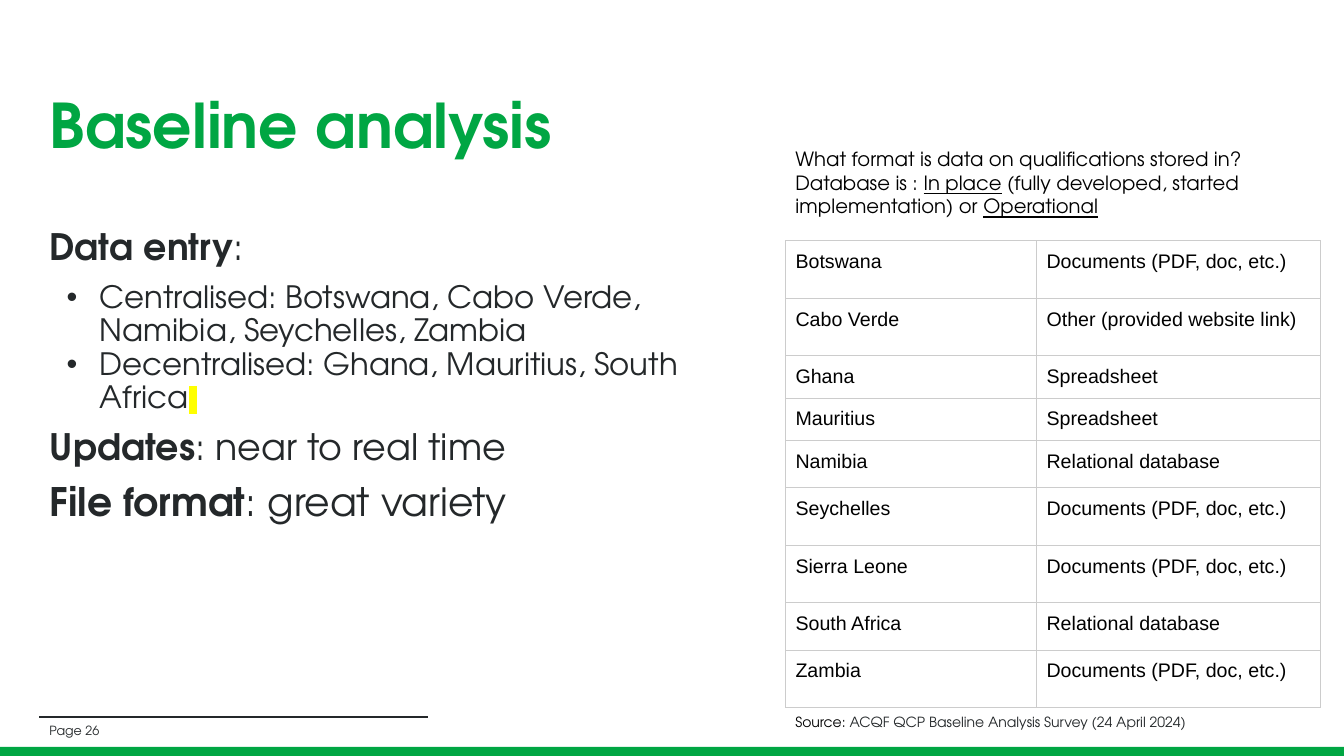
from dataclasses import dataclass
from typing import NamedTuple, Optional

from lxml import etree
from pptx import Presentation
from pptx.dml.color import RGBColor
from pptx.enum.shapes import MSO_CONNECTOR, MSO_SHAPE
from pptx.enum.text import MSO_ANCHOR, MSO_AUTO_SIZE, PP_ALIGN
from pptx.oxml.ns import qn
from pptx.util import Inches, Pt

GREEN = RGBColor(0x00, 0xA6, 0x43)
INK = RGBColor(0x24, 0x28, 0x2A)
BLACK = RGBColor(0x00, 0x00, 0x00)
YELLOW = RGBColor(0xFF, 0xFF, 0x00)
GREY = RGBColor(0xCC, 0xCC, 0xCC)

RECTANGLE = MSO_SHAPE.RECTANGLE
STRAIGHT = MSO_CONNECTOR.STRAIGHT
TOP, MIDDLE = MSO_ANCHOR.TOP, MSO_ANCHOR.MIDDLE
LEFT = PP_ALIGN.LEFT
NO_FIT = MSO_AUTO_SIZE.NONE

DISPLAY_FONT = "TeX Gyre Adventor"
TABLE_FONT = "Arial"

# The slide is a grid of 100 columns by 100 rows.
WIDTH, HEIGHT = Inches(13.33), Inches(7.5)
COLUMN, ROW = WIDTH / 100, HEIGHT / 100
MARGIN = 2.93
RIGHT_PART = 58.44


class Frame(NamedTuple):
    left: float
    top: float
    width: float
    height: float

    def lengths(self) -> tuple:
        return (round(self.left * COLUMN), round(self.top * ROW),
                round(self.width * COLUMN), round(self.height * ROW))


@dataclass(frozen=True)
class Span:
    text: str
    size: float
    color: RGBColor = INK
    bold: bool = False
    underline: bool = False
    highlight: Optional[RGBColor] = None
    font: str = DISPLAY_FONT


@dataclass(frozen=True)
class Para:
    spans: tuple
    before: float = 0
    spacing: float = 1.0
    bullet: bool = False


def add_color(parent, tag: str, color: RGBColor):
    element = etree.SubElement(parent, qn(tag))
    etree.SubElement(element, qn("a:srgbClr"), val=str(color))
    return element


def write_span(paragraph, span: Span) -> None:
    run = paragraph.add_run()
    run.text = span.text
    font = run.font
    font.name, font.size, font.bold = span.font, Pt(span.size), span.bold
    font.underline = span.underline
    font.color.rgb = span.color
    if span.highlight is not None:
        properties = run._r.get_or_add_rPr()
        mark = add_color(properties, "a:highlight", span.highlight)
        properties.find(qn("a:solidFill")).addnext(mark)


def set_bullet(paragraph, bullet: bool) -> None:
    properties = paragraph._p.get_or_add_pPr()
    properties.set("marL", str(Inches(0.5) if bullet else 0))
    properties.set("indent", str(Inches(-0.33) if bullet else 0))
    if bullet:
        add_color(properties, "a:buClr", INK)
        etree.SubElement(properties, qn("a:buFont"), typeface="Arial")
        etree.SubElement(properties, qn("a:buChar"), char="•")
    else:
        etree.SubElement(properties, qn("a:buNone"))


def write_paras(text_frame, paras: tuple) -> None:
    for index, para in enumerate(paras):
        paragraph = text_frame.add_paragraph() if index else text_frame.paragraphs[0]
        set_bullet(paragraph, para.bullet)
        paragraph.alignment = LEFT
        paragraph.line_spacing = para.spacing
        paragraph.space_before = Pt(para.before)
        for span in para.spans:
            write_span(paragraph, span)


def fill_box(box, frame: Frame, paras: tuple, anchor=TOP, inset: float = 0.05) -> None:
    """Place a placeholder or text box and write its paragraphs."""
    box.left, box.top, box.width, box.height = frame.lengths()
    text_frame = box.text_frame
    text_frame.word_wrap = True
    text_frame.auto_size = NO_FIT
    text_frame.vertical_anchor = anchor
    text_frame.margin_left = text_frame.margin_right = Inches(0.1)
    text_frame.margin_top = text_frame.margin_bottom = Inches(inset)
    write_paras(text_frame, paras)


def add_footer(page) -> None:
    bar = page.shapes.add_shape(RECTANGLE, *Frame(0, 98.8, 100, 1.2).lengths())
    bar.shadow.inherit = False
    bar.fill.solid()
    bar.fill.fore_color.rgb = GREEN
    bar.line.fill.background()
    left, top, width, _ = Frame(MARGIN, 94.8, 28.88, 0).lengths()
    rule = page.shapes.add_connector(STRAIGHT, left, top, left + width, top)
    rule.line.color.rgb = INK
    rule.line.width = Pt(1.5)
    etree.SubElement(rule._element.spPr, qn("a:effectLst"))


def format_cell(cell, text: str) -> None:
    cell.margin_left = cell.margin_right = Inches(0.1)
    cell.margin_top = cell.margin_bottom = Inches(0.1)
    cell.vertical_anchor = TOP
    write_span(cell.text_frame.paragraphs[0], Span(text, 14, BLACK, font=TABLE_FONT))
    properties = cell._tc.get_or_add_tcPr()
    for side in ("a:lnL", "a:lnR", "a:lnT", "a:lnB"):
        border = add_color(etree.SubElement(properties, qn(side), w=str(Pt(0.75))),
                           "a:solidFill", GREY)
        border.getparent().set("cap", "flat")
    cell.fill.background()


class Storage(NamedTuple):
    country: str
    data_format: str
    rows: float


TALL, MEDIUM, SHORT = 7.6, 6.27, 5.6
DOCUMENTS = "Documents (PDF, doc, etc.)"
STORAGES = (
    Storage("Botswana", DOCUMENTS, TALL),
    Storage("Cabo Verde", "Other (provided website link)", TALL),
    Storage("Ghana", "Spreadsheet", SHORT),
    Storage("Mauritius", "Spreadsheet", SHORT),
    Storage("Namibia", "Relational database", MEDIUM),
    Storage("Seychelles", DOCUMENTS, TALL),
    Storage("Sierra Leone", DOCUMENTS, TALL),
    Storage("South Africa", "Relational database", MEDIUM),
    Storage("Zambia", DOCUMENTS, TALL),
)
TABLE_COLUMNS = (18.68, 21.15)


def add_storage_table(page) -> None:
    frame = Frame(RIGHT_PART, 31.87, sum(TABLE_COLUMNS), sum(s.rows for s in STORAGES))
    table = page.shapes.add_table(len(STORAGES), 2, *frame.lengths()).table
    table.first_row = table.horz_banding = False
    for column, width in zip(table.columns, TABLE_COLUMNS):
        column.width = round(width * COLUMN)
    for index, storage in enumerate(STORAGES):
        table.rows[index].height = round(storage.rows * ROW)
        format_cell(table.cell(index, 0), storage.country)
        format_cell(table.cell(index, 1), storage.data_format)


def topic(label: str, rest: str, size: float, before: float = 10) -> Para:
    return Para((Span(label, size, bold=True), Span(rest, size)), before, 0.9)


TITLE = (Para((Span("Baseline analysis", 44, GREEN, bold=True),), spacing=0.9),)
FINDINGS = (
    topic("Data entry", ":", 26, before=0),
    Para((Span("Centralised: Botswana, Cabo Verde, Namibia, Seychelles, Zambia", 22),),
         10, 0.9, bullet=True),
    Para((Span("Decentralised: Ghana, Mauritius, South Africa", 22),
          Span(" ", 22, highlight=YELLOW)), 0, 0.9, bullet=True),
    topic("Updates", ": near to real time", 26),
    topic("File format", ": great variety", 28),
)
QUESTION = (
    Para((Span("What format is data on qualifications stored in?", 14, BLACK),)),
    Para((Span("Database is : ", 14, BLACK),
          Span("In place", 14, BLACK, underline=True),
          Span(" (fully developed, started implementation) or ", 14, BLACK),
          Span("Operational", 14, BLACK, underline=True))),
)
SOURCE = (Para((Span("Source: ", 10, BLACK),
                Span("ACQF QCP Baseline Analysis Survey (24 April 2024)", 10))),)
PAGE_NUMBER = (Para((Span("Page 26", 9),)),)


def main() -> None:
    deck = Presentation()
    deck.slide_width, deck.slide_height = WIDTH, HEIGHT
    page = deck.slides.add_slide(deck.slide_layouts[1])
    add_footer(page)
    fill_box(page.shapes.title, Frame(MARGIN, 8.93, 94.07, 16.27), TITLE, MIDDLE)
    fill_box(page.placeholders[1], Frame(MARGIN, 29.6, 52.66, 57.47), FINDINGS)
    add_storage_table(page)
    for frame, paras, anchor, inset in (
        (Frame(MARGIN, 95.33, 30.46, 2.53), PAGE_NUMBER, MIDDLE, 0.05),
        (Frame(RIGHT_PART, 18.13, 39.76, 12.13), QUESTION, TOP, 0.1),
        (Frame(RIGHT_PART, 93.07, 41.41, 6.93), SOURCE, TOP, 0.1),
    ):
        fill_box(page.shapes.add_textbox(*frame.lengths()), frame, paras, anchor, inset)
    deck.save("out.pptx")


if __name__ == "__main__":
    main()
